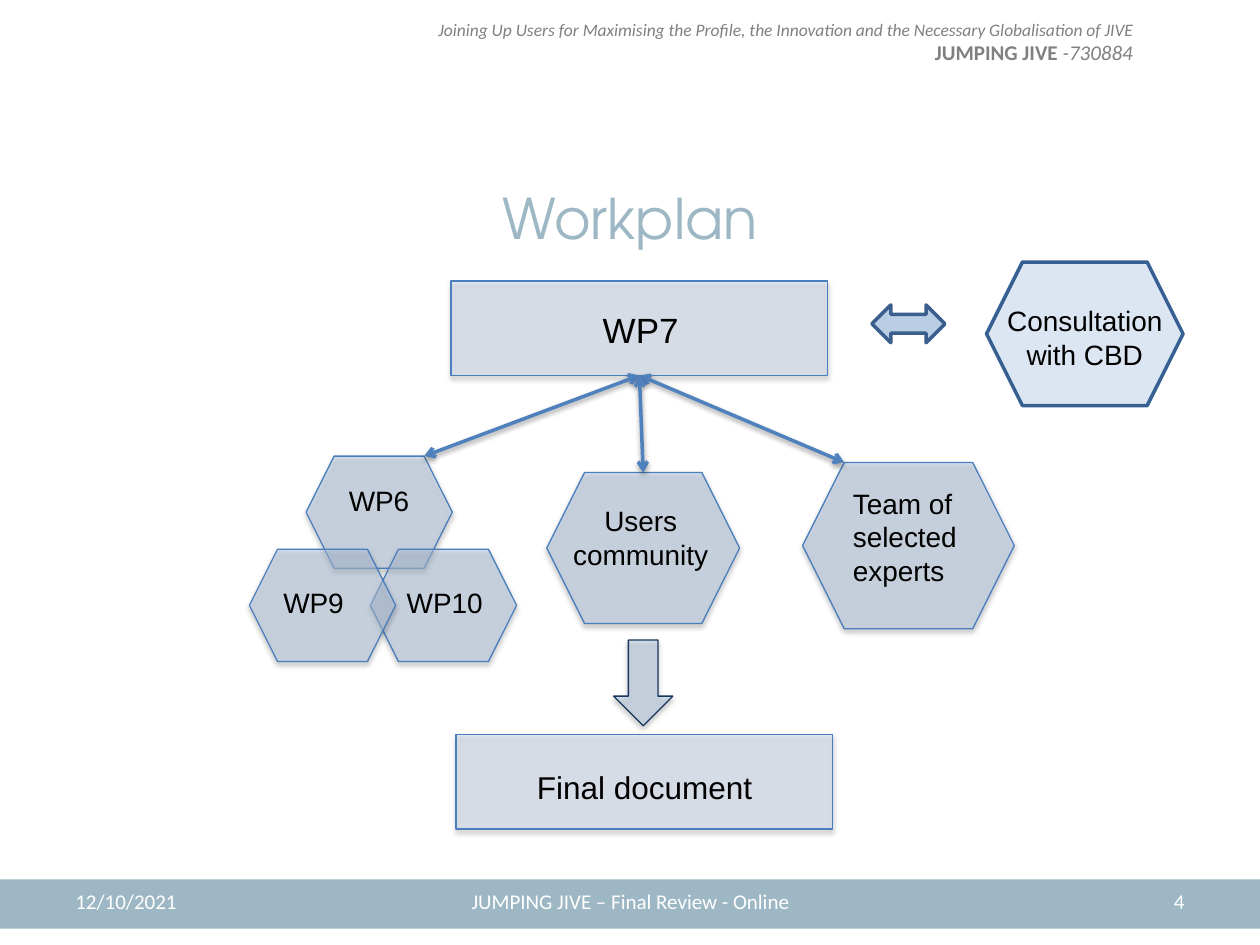
from lxml.etree import SubElement
from pptx import Presentation
from pptx.dml.color import RGBColor
from pptx.enum.shapes import MSO_CONNECTOR, MSO_SHAPE
from pptx.enum.text import MSO_ANCHOR, PP_ALIGN
from pptx.oxml.ns import qn
from pptx.util import Inches, Pt

THEME = {
    "band": "9DB7C4", "white": "FFFFFF", "black": "000000", "grey": "808080",
    "link": "4F81BD",
    "body": "Arial", "small": "Calibri", "heading": "TeX Gyre Adventor",
    "title": 32, "wp": 20, "document": 18, "label": 16, "footer": 12, "tagline": 10,
}
# style: fill, opacity %, line colour, line width, shadow
STYLES = {
    "box": ("C6D9F1", 37, "4B7EBC", 0.75, True),
    "group": ("B9CDE5", 51, "4B7EBC", 0.75, True),
    "result": ("B9CDE5", 51, "17375E", 0.75, True),
    "exchange": ("B9CDE5", 100, "3A5F8C", 2, False),
    "consultation": ("DCE6F2", 100, "376092", 2, False),
}
LEFT, CENTER, RIGHT = PP_ALIGN.LEFT, PP_ALIGN.CENTER, PP_ALIGN.RIGHT

TITLE = ("Workplan", (0.75, 0.92, 8.5, 1.61))
HEADER_BOX = (3.21, 0.1, 5.88, 0.47)
# header lines as runs: text, size, bold, italic
HEADER = [
    [("Joining Up Users for Maximising the Profile, the Innovation and the "
      "Necessary Globalisation of JIVE", "tagline", False, True)],
    [("JUMPING JIVE ", "footer", True, False), ("-730884", "footer", False, True)],
]
FOOTER = [
    ("12/10/2021", (0.5, 6.95, 2.33, 0.4), LEFT),
    ("JUMPING JIVE – Final Review - Online", (3.42, 6.95, 3.17, 0.4), CENTER),
    ("4", (7.17, 6.95, 2.33, 0.4), RIGHT),
]
NODES = {
    "WP7": (MSO_SHAPE.RECTANGLE, (3.58, 2.23, 2.99, 0.75), "box"),
    "document": (MSO_SHAPE.RECTANGLE, (3.62, 5.83, 2.99, 0.75), "box"),
    "WP6": (MSO_SHAPE.HEXAGON, (2.43, 3.62, 1.16, 0.89), "group"),
    "WP10": (MSO_SHAPE.HEXAGON, (2.94, 4.36, 1.16, 0.89), "group"),
    "WP9": (MSO_SHAPE.HEXAGON, (1.98, 4.36, 1.16, 0.89), "group"),
    "experts": (MSO_SHAPE.HEXAGON, (6.37, 3.67, 1.68, 1.32), "group"),
    "result": (MSO_SHAPE.DOWN_ARROW, (4.87, 5.08, 0.47, 0.68), "result"),
    "users": (MSO_SHAPE.HEXAGON, (4.34, 3.75, 1.53, 1.2), "group"),
    "exchange": (MSO_SHAPE.LEFT_RIGHT_ARROW, (6.92, 2.42, 0.58, 0.3), "exchange"),
    "consultation": (MSO_SHAPE.HEXAGON, (7.83, 2.08, 1.56, 1.14), "consultation"),
}
LABELS = [
    ("WP7", (4.16, 2.4, 1.85, 0.44), "wp", CENTER),
    ("WP6", (2.67, 3.79, 0.75, 0.37), "label", LEFT),
    ("WP9", (2.15, 4.6, 0.69, 0.37), "label", LEFT),
    ("WP10", (3.13, 4.6, 0.96, 0.37), "label", LEFT),
    ("Team of selected experts", (6.67, 3.81, 1.15, 0.91), "label", LEFT),
    ("Final document", (3.82, 6.05, 2.59, 0.4), "document", CENTER),
    ("Users community", (4.41, 3.95, 1.35, 0.64), "label", CENTER),
    ("Consultation with CBD", (7.83, 2.36, 1.56, 0.64), "label", CENTER),
]
# node reached from WP7, and the part of its top edge that is touched
LINKS = [("WP6", "right"), ("experts", "left"), ("users", "middle")]


def color(name):
    return RGBColor.from_string(THEME[name])


def inches(box):
    return [Inches(value) for value in box]


def set_font(font, name, size, ink, bold=None, italic=None):
    font.name, font.size = THEME[name], Pt(THEME[size])
    font.color.rgb = color(ink)
    font.bold, font.italic = bold, italic


def add_shadow(shape, opacity, distance):
    properties = shape._element.spPr
    for old in properties.findall(qn("a:effectLst")):
        properties.remove(old)
    effects = SubElement(properties, qn("a:effectLst"))
    shadow = SubElement(effects, qn("a:outerShdw"), blurRad=str(Pt(3.1)),
                        dist=str(Pt(distance)), dir="5400000", rotWithShape="0")
    ink = SubElement(shadow, qn("a:srgbClr"), val=THEME["black"])
    SubElement(ink, qn("a:alpha"), val=str(opacity * 1000))


def add_node(slide, preset, box, style):
    fill, opacity, line, width, shadow = STYLES[style]
    shape = slide.shapes.add_shape(preset, *inches(box))
    shape.shadow.inherit = False
    shape.fill.solid()
    shape.fill.fore_color.rgb = RGBColor.from_string(fill)
    if opacity < 100:
        ink = shape._element.spPr.find(qn("a:solidFill"))[0]
        SubElement(ink, qn("a:alpha"), val=str(opacity * 1000))
    shape.line.color.rgb = RGBColor.from_string(line)
    shape.line.width = Pt(width)
    if shadow:
        add_shadow(shape, 35, 1.8)
    return shape


def add_text(slide, text, box, font, size, ink, align, anchor=MSO_ANCHOR.TOP):
    frame = slide.shapes.add_textbox(*inches(box)).text_frame
    frame.word_wrap, frame.vertical_anchor = True, anchor
    paragraph = frame.paragraphs[0]
    paragraph.text, paragraph.alignment = text, align
    set_font(paragraph.font, font, size, ink)


def add_link(slide, start, target, corner):
    inset = target.height // 4  # hexagon corners sit a quarter of the height inwards
    offset = {"left": inset, "middle": target.width // 2,
              "right": target.width - inset}[corner]
    link = slide.shapes.add_connector(
        MSO_CONNECTOR.STRAIGHT, start.left + start.width // 2,
        start.top + start.height, target.left + offset, target.top)
    link.begin_connect(start, 2)
    link.line.color.rgb = color("link")
    link.line.width = Pt(2)
    line = link.line._get_or_add_ln()
    for end in ("a:headEnd", "a:tailEnd"):
        SubElement(line, qn(end), type="arrow")
    add_shadow(link, 38, 1.6)


def main():
    presentation = Presentation()
    presentation.slide_width, presentation.slide_height = Inches(10), Inches(7.5)
    slide = presentation.slides.add_slide(presentation.slide_layouts[5])

    # Footer band
    band = slide.shapes.add_shape(MSO_SHAPE.RECTANGLE, *inches((0, 6.98, 10, 0.39)))
    band.shadow.inherit = False
    band.fill.solid()
    band.fill.fore_color.rgb = color("band")
    band.line.fill.background()
    for text, box, align in FOOTER:
        add_text(slide, text, box, "small", "footer", "white", align, MSO_ANCHOR.MIDDLE)

    # Project header
    frame = slide.shapes.add_textbox(*inches(HEADER_BOX)).text_frame
    frame.word_wrap = True
    for index, runs in enumerate(HEADER):
        paragraph = frame.add_paragraph() if index else frame.paragraphs[0]
        paragraph.alignment = RIGHT
        for text, size, bold, italic in runs:
            run = paragraph.add_run()
            run.text = text
            set_font(run.font, "small", size, "grey", bold, italic)

    # Title
    title = slide.shapes.title
    title.left, title.top, title.width, title.height = inches(TITLE[1])
    title.text_frame.vertical_anchor = MSO_ANCHOR.MIDDLE
    paragraph = title.text_frame.paragraphs[0]
    paragraph.text, paragraph.alignment = TITLE[0], CENTER
    set_font(paragraph.font, "heading", "title", "band")

    # Diagram: nodes, links, labels
    nodes = {name: add_node(slide, *node) for name, node in NODES.items()}
    for name, corner in LINKS:
        add_link(slide, nodes["WP7"], nodes[name], corner)
    for text, box, size, align in LABELS:
        add_text(slide, text, box, "body", size, "black", align)

    presentation.save("out.pptx")


if __name__ == "__main__":
    main()
